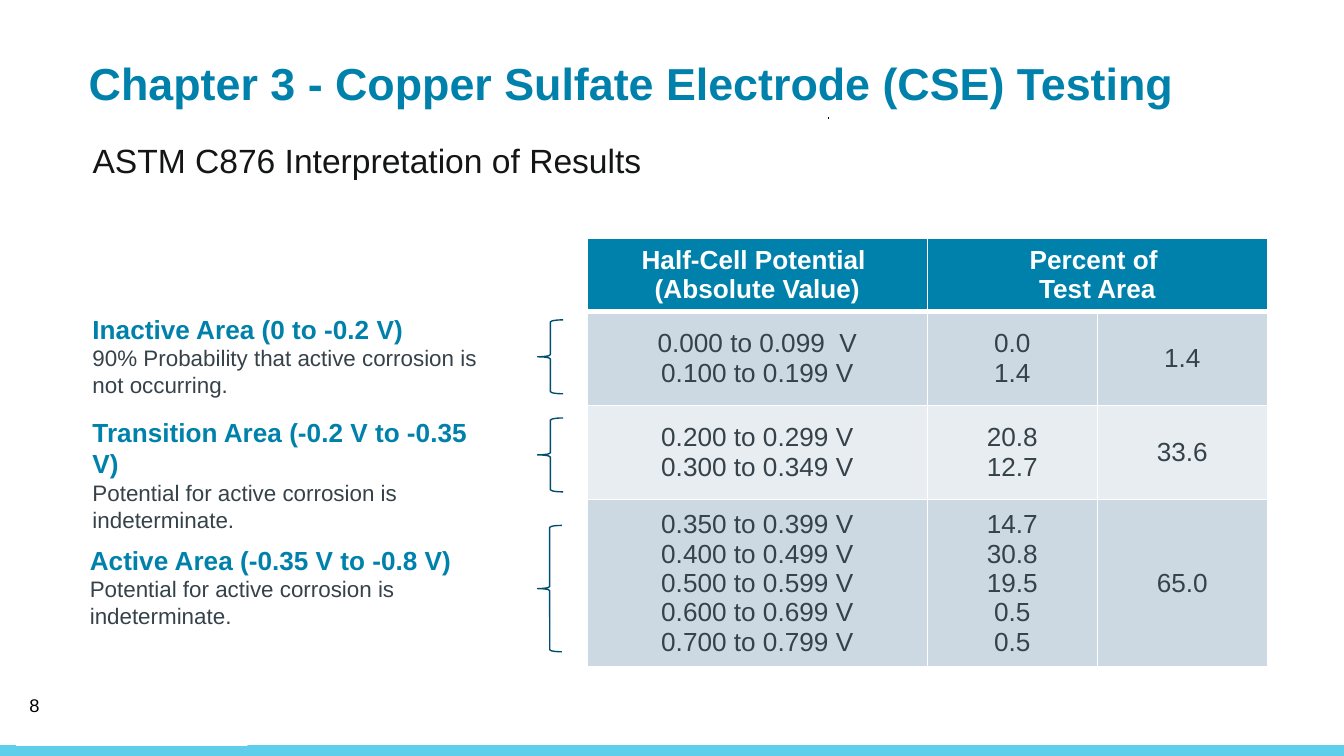
import pptx
import pptx.dml.color
import pptx.enum.shapes
import pptx.enum.text
import pptx.oxml
import pptx.oxml.ns
import pptx.util

Inches = pptx.util.Inches
Pt = pptx.util.Pt
MIDDLE = pptx.enum.text.MSO_ANCHOR.MIDDLE
SHAPES = pptx.enum.shapes.MSO_SHAPE
TEAL, GRAY, WHITE, BLACK = "0081AB", "36424A", "FFFFFF", "000000"
WIDTH = 10
HEIGHT = WIDTH * 9 / 16

AREAS = [
    ((0.59, 2.28, 3.2, 0.74), "Inactive Area (0 to -0.2 V)",
     "90% Probability that active corrosion is not occurring.",
     (4, 2.38, 0.19, 0.55)),
    ((0.59, 3.05, 3.23, 0.74), "Transition Area (-0.2 V to -0.35 V)",
     "Potential for active corrosion is indeterminate.",
     (4, 3.11, 0.19, 0.55)),
    ((0.57, 4, 3.43, 0.74), "Active Area (-0.35 V to -0.8 V)",
     "Potential for active corrosion is indeterminate.",
     (4, 3.91, 0.18, 0.94)),
]
HEADER = [["Half-Cell Potential ", "(Absolute Value)"], ["Percent of ", "Test Area"]]
RESULTS = [
    [["0.000 to 0.099  V", "0.100 to 0.199 V"], ["0.0", "1.4"], ["1.4"]],
    [["0.200 to 0.299 V", "0.300 to 0.349 V"], ["20.8", "12.7"], ["33.6"]],
    [["0.350 to 0.399 V", "0.400 to 0.499 V", "0.500 to 0.599 V",
      "0.600 to 0.699 V", "0.700 to 0.799 V"],
     ["14.7", "30.8", "19.5", "0.5", "0.5"], ["65.0"]],
]
ROW_HEIGHTS = [0.41, 0.7, 0.7, 0.41]


def rgb(color):
    """Return the colour of a hex string."""
    return pptx.dml.color.RGBColor.from_string(color)


def inches(box):
    """Return the lengths of a box in inches."""
    return [Inches(v) for v in box]


def add_run(p, text, size, color, bold=False):
    """Add one formatted run to a paragraph."""
    r = p.add_run()
    r.text = text
    r.font.name = "Arial"
    r.font.size = Pt(size)
    r.font.bold = bold
    r.font.color.rgb = rgb(color)


def fill_frame(tf, lines, align=None, spacing=None):
    """Write one paragraph for each (text, size, color, bold) line."""
    tf.word_wrap = True
    for i, line in enumerate(lines):
        p = tf.add_paragraph() if i else tf.paragraphs[0]
        p.alignment = align
        p.line_spacing = spacing
        add_run(p, *line)


def add_text(s, box, lines, anchor=None):
    """Add a text box."""
    tf = s.shapes.add_textbox(*inches(box)).text_frame
    tf.vertical_anchor = anchor
    fill_frame(tf, lines)


def add_title(s, box, text):
    """Place and format the title placeholder."""
    sp = s.shapes.title
    sp.left, sp.top, sp.width, sp.height = inches(box)
    tf = sp.text_frame
    tf.auto_size = pptx.enum.text.MSO_AUTO_SIZE.NONE
    tf.vertical_anchor = MIDDLE
    tf.margin_left = tf.margin_right = Inches(0.07)
    tf.margin_top = tf.margin_bottom = Inches(0.04)
    fill_frame(tf, [(text, 24, TEAL, True)], pptx.enum.text.PP_ALIGN.LEFT, 0.8)


def add_bar(s, box, color):
    """Add a plain filled rectangle."""
    sp = s.shapes.add_shape(SHAPES.RECTANGLE, *inches(box))
    sp.shadow.inherit = False
    sp.fill.solid()
    sp.fill.fore_color.rgb = rgb(color)
    sp.line.fill.background()


def add_dot(s, x, y):
    """Add a line so short that it shows as a dot."""
    line = s.shapes.add_connector(
        pptx.enum.shapes.MSO_CONNECTOR.STRAIGHT, *inches((x, y, x + 0.01, y)))
    line.line.color.rgb = rgb(BLACK)
    line.line.width = Pt(1)
    line._element.spPr.append(pptx.oxml.parse_xml(
        f"<a:effectLst {pptx.oxml.ns.nsdecls('a')}/>"))


def add_area(s, box, heading, note, brace_box):
    """Add the label of one corrosion area and its brace."""
    add_text(s, box, [(heading, 14, TEAL, True), (note, 12, GRAY)])
    brace = s.shapes.add_shape(SHAPES.LEFT_BRACE, *inches(brace_box))
    brace.shadow.inherit = False
    brace.fill.background()
    brace.line.color.rgb = rgb("004E6F")
    brace.line.width = Pt(0.75)


def format_cell(cell, fill, top, bottom):
    """Set the white borders, given in points, the fill and the margins of a cell."""
    tcPr = cell._tc.get_or_add_tcPr()
    for side, width in zip("LRTB", (1, 1, top, bottom)):
        tcPr.append(pptx.oxml.parse_xml(
            f'<a:ln{side} {pptx.oxml.ns.nsdecls("a")} w="{Pt(width)}">'
            f'<a:solidFill><a:srgbClr val="{WHITE}"/></a:solidFill></a:ln{side}>'))
    cell.fill.solid()
    cell.fill.fore_color.rgb = rgb(fill)
    cell.vertical_anchor = MIDDLE
    cell.margin_left = cell.margin_right = Inches(0.08)
    cell.margin_top = cell.margin_bottom = Inches(0.04)


def add_results(s, box):
    """Add the table of half-cell potentials."""
    frame = s.shapes.add_table(len(ROW_HEIGHTS), 3, *inches(box))
    table = frame.table
    for column, share in zip(table.columns, (0.5, 0.25, 0.25)):
        column.width = Inches(box[2] * share)
    for row, height in zip(table.rows, ROW_HEIGHTS):
        row.height = Inches(height)
    frame.height = Inches(box[3])
    table.cell(0, 1).merge(table.cell(0, 2))
    fills = [TEAL, "CCD8E2", "E7EDF1", "CCD8E2"]
    for i, (texts, fill) in enumerate(zip([HEADER] + RESULTS, fills)):
        head = i == 0
        for cell in table.rows[i].cells:
            format_cell(cell, fill, 3 if i == 1 else 1, 3 if head else 1)
        for j, lines in enumerate(texts):
            fill_frame(table.cell(i, j).text_frame,
                       [(t, 14, WHITE if head else GRAY, head) for t in lines],
                       pptx.enum.text.PP_ALIGN.CENTER)


def main():
    """Build the slide and save it."""
    prs = pptx.Presentation()
    prs.slide_width, prs.slide_height = inches((WIDTH, HEIGHT))
    s = prs.slides.add_slide(prs.slide_layouts[5])
    add_bar(s, (0, HEIGHT - 0.08, WIDTH, 0.08), "5FCEEA")
    add_bar(s, (0.12, 5.42, 1.72, 0.13), WHITE)
    add_dot(s, 6.16, 0.88)
    add_title(s, (0.59, 0.37, 8.99, 0.57),
              "Chapter 3 - Copper Sulfate Electrode (CSE) Testing")
    add_text(s, (0.59, 0.99, 7.18, 0.83),
             [("ASTM C876 Interpretation of Results", 18, "141615")])
    add_text(s, (0.12, 5.1, 2.25, 0.3), [("8", 9.8, BLACK)], MIDDLE)
    add_results(s, (4.37, 1.77, 5.06, 3.23))
    for area in AREAS:
        add_area(s, *area)
    prs.save("out.pptx")


if __name__ == "__main__":
    main()
